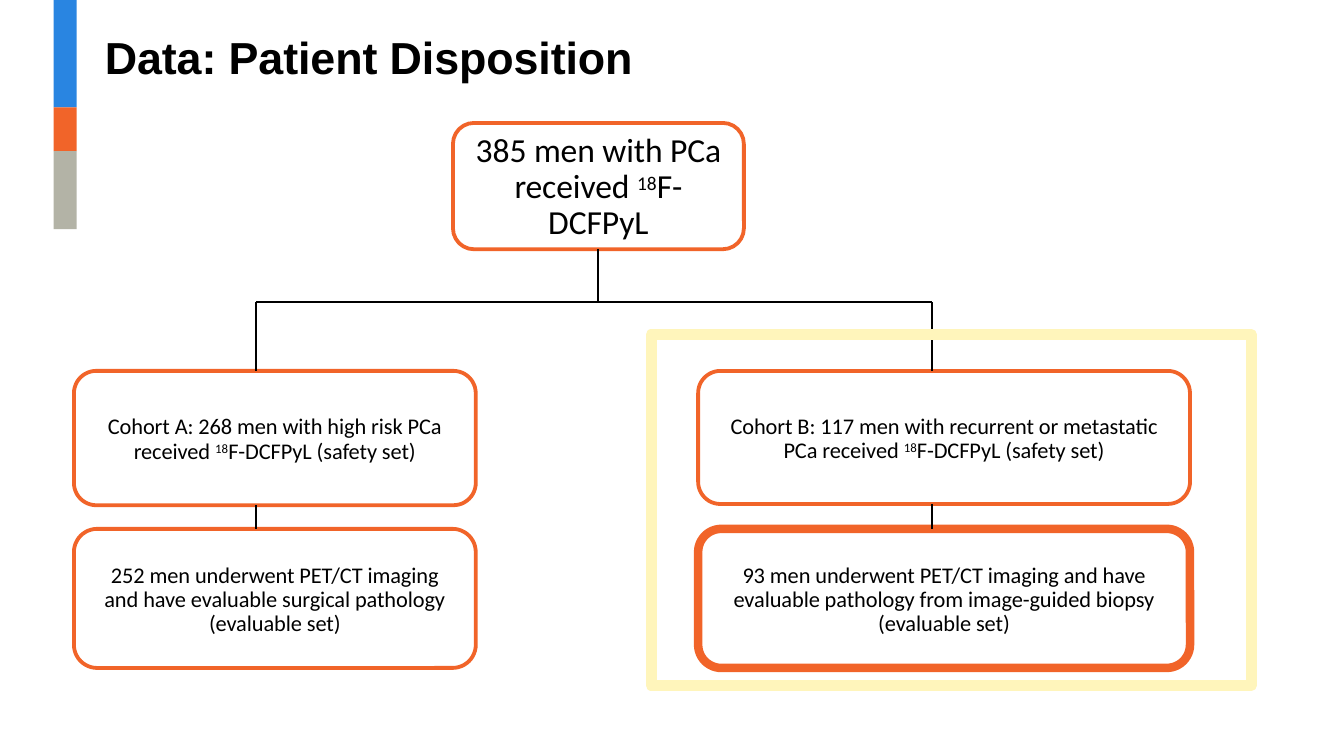
from pptx import Presentation
from pptx.dml.color import RGBColor
from pptx.enum.shapes import MSO_CONNECTOR, MSO_SHAPE
from pptx.enum.text import MSO_ANCHOR, MSO_AUTO_SIZE, PP_ALIGN
from pptx.oxml.ns import qn
from pptx.util import Emu, Pt
from lxml.etree import SubElement

SCALE = 4572  # EMU per px, 200 px to the inch
BLACK = RGBColor(0x00, 0x00, 0x00)
BLUE = RGBColor(0x29, 0x85, 0xE1)
ORANGE = RGBColor(0xF1, 0x64, 0x29)
GREY = RGBColor(0xB3, 0xB3, 0xA6)
YELLOW = RGBColor(0xFF, 0xF5, 0xBB)
ISOTOPE = "18"  # set as a superscript


def px(n):
    return Emu(n * SCALE)


def add_run(para, text, size, font="Calibri", bold=False):
    run = para.add_run()
    run.text = text
    run.font.name = font
    run.font.size = Pt(size)
    run.font.bold = bold
    run.font.color.rgb = BLACK
    props = run._r.get_or_add_rPr()
    props.set("spc", "-5")
    if text == ISOTOPE:
        props.set("baseline", "25000")


def add_box(slide, box, kind=MSO_SHAPE.RECTANGLE, fill=None, line=None, width=2.04):
    shape = slide.shapes.add_shape(kind, *map(px, box))
    shape.shadow.inherit = False
    if fill is None:
        shape.fill.background()
    else:
        shape.fill.solid()
        shape.fill.fore_color.rgb = fill
    if line is None:
        shape.line.fill.background()
    else:
        shape.line.color.rgb = line
        shape.line.width = Pt(width)
    return shape


def add_node(slide, box, texts, size=12, pitch=13, width=2.04, inset=26):
    """Draw a rounded box with one centred paragraph, given as a list of runs."""
    node = add_box(slide, box, MSO_SHAPE.ROUNDED_RECTANGLE, line=ORANGE, width=width)
    frame = node.text_frame
    frame.margin_left = frame.margin_right = px(inset)
    frame.margin_top, frame.margin_bottom = px(4), 0
    frame.word_wrap = True
    frame.vertical_anchor = MSO_ANCHOR.MIDDLE
    para = frame.paragraphs[0]
    para.alignment = PP_ALIGN.CENTER
    para.line_spacing = Pt(pitch)
    for text in texts:
        add_run(para, text, size)
    return node


def add_line(slide, x1, y1, x2, y2, width=0.96):
    line = slide.shapes.add_connector(MSO_CONNECTOR.STRAIGHT, *map(px, (x1, y1, x2, y2)))
    line.line.color.rgb = BLACK
    line.line.width = Pt(width)
    SubElement(line._element.spPr, qn("a:effectLst"))
    return line


def add_title(slide, box, text):
    title = slide.shapes.title
    title.left, title.top, title.width, title.height = map(px, box)
    frame = title.text_frame
    frame.margin_left, frame.margin_top = px(2), px(4)
    frame.margin_right = frame.margin_bottom = 0
    frame.word_wrap = True
    frame.auto_size = MSO_AUTO_SIZE.NONE
    frame.vertical_anchor = MSO_ANCHOR.TOP
    frame.paragraphs[0].alignment = PP_ALIGN.LEFT
    add_run(frame.paragraphs[0], text, 24, "Arial", True)


def add_stripe(slide, left, top, width):
    for color, height in ((BLUE, 160), (ORANGE, 65), (GREY, 116)):
        add_box(slide, (left, top, width, height), fill=color)
        top += height


def add_cohort(slide, box, stem, upper, safe, valued, bold=2.04, link=0.96):
    """Stack the safety set over the evaluable set, joined by a line at stem."""
    left, top, width, height = box
    lower = 207
    add_node(slide, (left, top, width, upper), safe)
    add_node(slide, (left, top + height - lower, width, lower), valued, width=bold)
    add_line(slide, left + stem, top + upper, left + stem, top + height - lower, link)


def add_tree(slide, left, top):
    """Draw the split from all patients into the two cohorts."""
    root = add_node(slide, (left + 564, top, 433, 188), [
        "385 men ", "with PCa received ", ISOTOPE, "F- ", "DCFPyL",
    ], 18, 19.4, inset=12)
    fork, level = top + 267, top + 369
    add_cohort(slide, (left, level, 598, 442), 271, 200, [
        "Cohort A: 268 men ", "with ", "high ", "risk PCa received ",
        ISOTOPE, "F-DCFPyL ", "(safety set)",
    ], [
        "252 men ", "underwent PET/CT ", "imaging and ",
        "have evaluable surgical pathology (evaluable set)",
    ])
    add_cohort(slide, (left + 929, level, 732, 442), 348, 198, [
        "Cohort ", "B: ", "117 men ", "with recurrent ", "or ",
        "metastatic PCa received ", ISOTOPE, "F-DCFPyL ", "(safety set)",
    ], [
        "93 men ", "underwent PET/CT ", "imaging and ",
        "have evaluable pathology from image-guided biopsy (evaluable set)",
    ], 4.56, 1.23)
    ends = left + 271, left + 1277
    trunk = add_line(slide, left + 780, top + 188, left + 780, fork)
    trunk.begin_connect(root, 2)
    trunk.end_x = trunk.begin_x
    add_line(slide, ends[0], fork, ends[1], fork)
    for x in ends:
        add_line(slide, x, fork, x, level)
    add_box(slide, (left + 859, top + 315, 893, 522), line=YELLOW, width=6)


def main():
    deck = Presentation()
    deck.slide_width, deck.slide_height = px(2000), px(1125)
    slide = deck.slides.add_slide(deck.slide_layouts[5])
    add_title(slide, (154, 40, 794, 86), "Data: Patient Disposition")
    add_stripe(slide, 80, 0, 34)
    add_tree(slide, 110, 183)
    deck.save("out.pptx")


if __name__ == "__main__":
    main()
